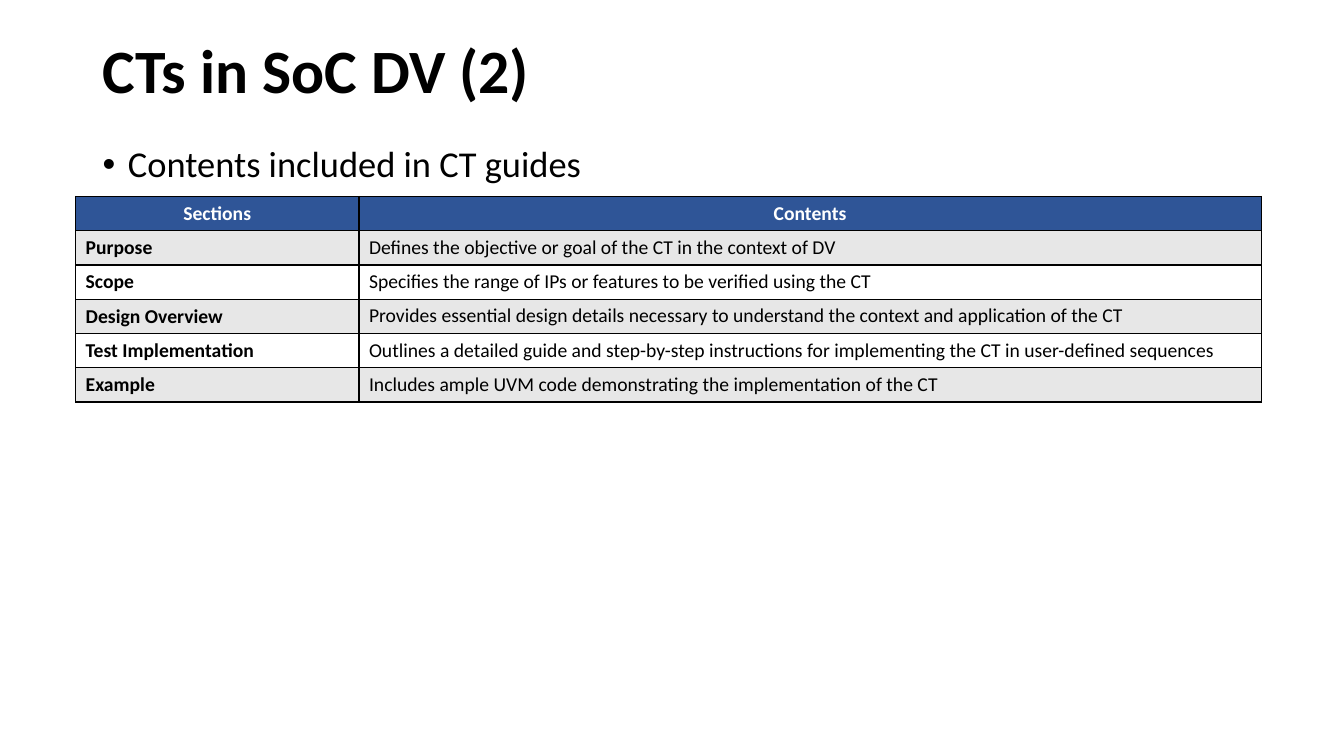
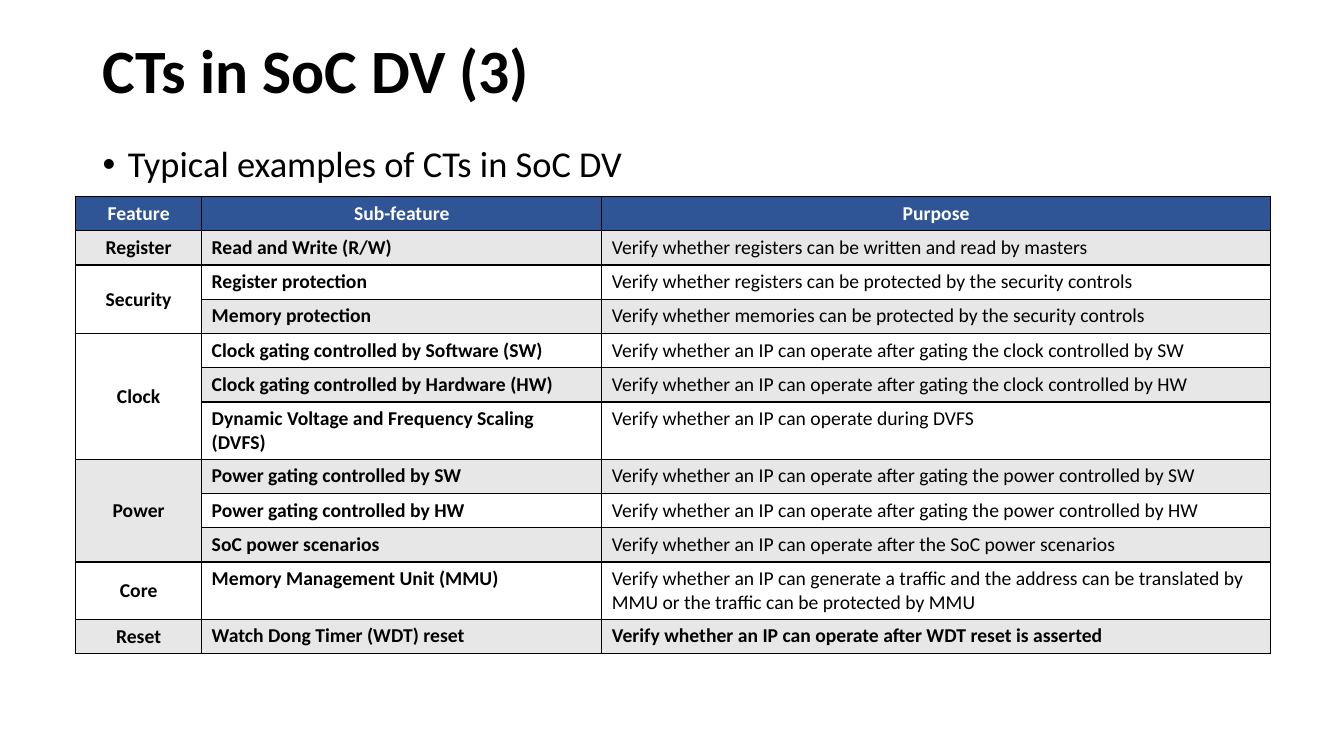
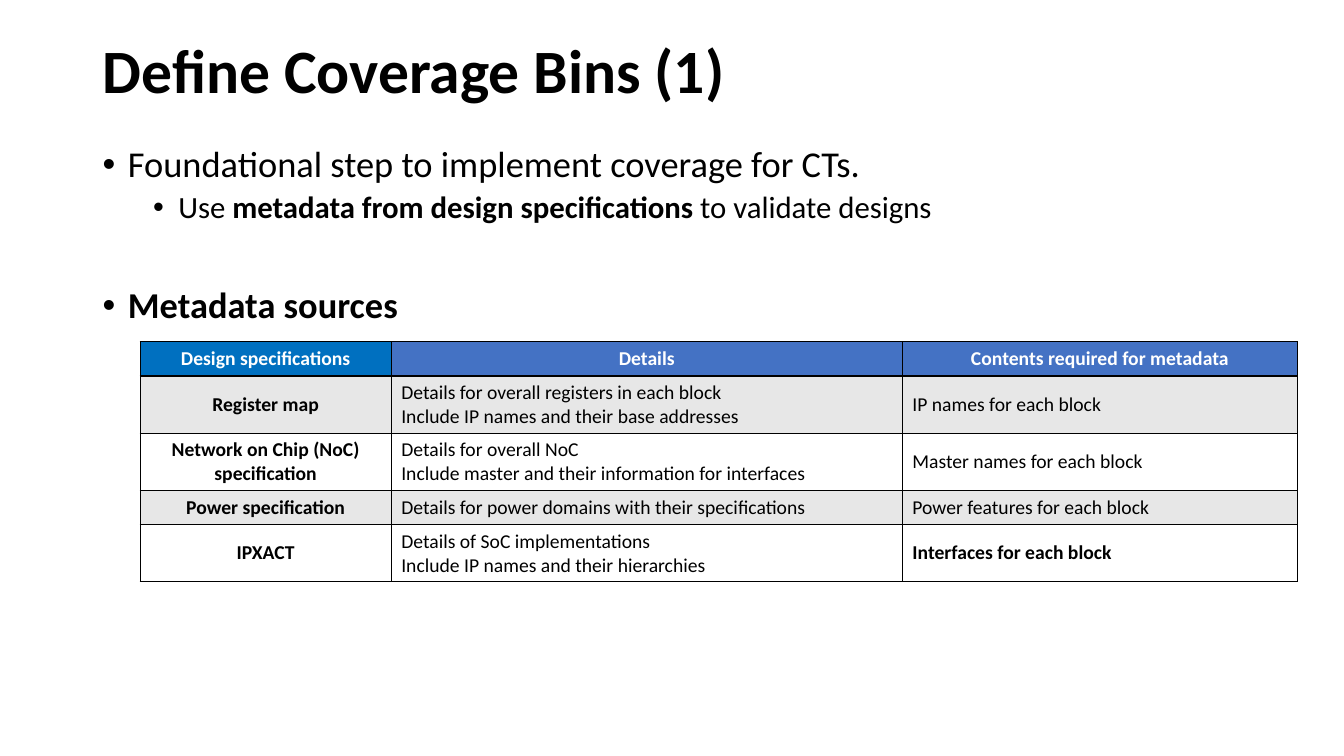
from lxml.etree import SubElement
from pptx import Presentation
from pptx.dml.color import RGBColor
from pptx.enum.text import MSO_ANCHOR as Anchor, PP_ALIGN as Align
from pptx.oxml.ns import qn
from pptx.util import Inches, Pt

# Shared look
FONT = "Calibri"
BLACK = RGBColor(0x00, 0x00, 0x00)
WHITE = RGBColor(0xFF, 0xFF, 0xFF)
STRIPE = RGBColor(0xE7, 0xE7, 0xE7)
NAVY = RGBColor(0x2F, 0x55, 0x97)
BLUE = RGBColor(0x44, 0x72, 0xC4)
BRIGHT_BLUE = RGBColor(0x00, 0x70, 0xC0)
LEFT, WIDTH = Inches(0.92), Inches(12.41)
ROW_HEIGHT = Inches(0.34)
BULLET_SIZES = [26, 22]
BULLET_INDENTS = [0.25, 0.75]


def style_font(font, size, color=BLACK, bold=False):
    font.name = FONT
    font.size = Pt(size)
    font.bold = bold
    font.color.rgb = color


def add_borders(cell):
    properties = cell._tc.get_or_add_tcPr()
    for position, side in enumerate(("a:lnL", "a:lnR", "a:lnT", "a:lnB")):
        line = properties.makeelement(qn(side), {"w": str(Pt(1))})
        fill = SubElement(line, qn("a:solidFill"))
        SubElement(fill, qn("a:srgbClr"), val=str(BLACK))
        properties.insert(position, line)


# Bullets: (level, space before, bold, text pieces); every second piece is bold
# Rows: None continues the merged cell above
SLIDES = [
    {
        "title": "CTs in SoC DV (2)",
        "bullets": [(0, 0, False, ["Contents included in CT guides"])],
        "place": (0.75, 1.95),
        "widths": [2.81, 8.95],
        "header_fills": [NAVY, NAVY],
        "centred": [], "bold": [0], "middle": [0], "bold_end": False,
        "rows": [
            ["Sections", "Contents"],
            ["Purpose", "Defines the objective or goal of the CT in the context of DV"],
            ["Scope", "Specifies the range of IPs or features to be verified using the CT"],
            ["Design Overview", "Provides essential design details necessary to understand "
             "the context and application of the CT"],
            ["Test Implementation", "Outlines a detailed guide and step-by-step instructions "
             "for implementing the CT in user-defined sequences"],
            ["Example", "Includes ample UVM code demonstrating the implementation of the CT"],
        ],
    },
    {
        "title": "CTs in SoC DV (3)",
        "bullets": [(0, 0, False, ["Typical examples of CTs in SoC DV"])],
        "place": (0.75, 1.95),
        "widths": [1.25, 3.97, 6.63],
        "header_fills": [NAVY, NAVY, NAVY],
        "centred": [0], "bold": [0, 1], "middle": [0], "bold_end": True,
        "rows": [
            ["Feature", "Sub-feature", "Purpose"],
            ["Register", "Read and Write (R/W)",
             "Verify whether registers can be written and read by masters"],
            ["Security", "Register protection",
             "Verify whether registers can be protected by the security controls"],
            [None, "Memory protection",
             "Verify whether memories can be protected by the security controls"],
            ["Clock", "Clock gating controlled by Software (SW)",
             "Verify whether an IP can operate after gating the clock controlled by SW"],
            [None, "Clock gating controlled by Hardware (HW)",
             "Verify whether an IP can operate after gating the clock controlled by HW"],
            [None, "Dynamic Voltage and Frequency Scaling (DVFS)",
             "Verify whether an IP can operate during DVFS"],
            ["Power", "Power gating controlled by SW",
             "Verify whether an IP can operate after gating the power controlled by SW"],
            [None, "Power gating controlled by HW",
             "Verify whether an IP can operate after gating the power controlled by HW"],
            [None, "SoC power scenarios",
             "Verify whether an IP can operate after the SoC power scenarios"],
            ["Core", "Memory Management Unit (MMU)",
             "Verify whether an IP can generate a traffic and the address can be "
             "translated by MMU or the traffic can be protected by MMU"],
            ["Reset", "Watch Dong Timer (WDT) reset",
             "Verify whether an IP can operate after WDT reset is asserted"],
        ],
    },
    {
        "title": "Define Coverage Bins (1)",
        "bullets": [
            (0, 0, False, ["Foundational step to implement coverage for CTs."]),
            (1, 5, False, ["Use ", "metadata from design specifications ",
                           "to validate designs"]),
            (0, 44, True, ["Metadata sources"]),
        ],
        "place": (1.39, 3.39),
        "widths": [2.49, 5.07, 3.92],
        "header_fills": [BRIGHT_BLUE, BLUE, BLUE],
        "centred": [0], "bold": [0], "middle": [0, 2], "bold_end": True,
        "rows": [
            ["Design specifications", "Details", "Contents required for metadata"],
            ["Register map", "Details for overall registers in each block\n"
             "Include IP names and their base addresses", "IP names for each block"],
            ["Network on Chip (NoC)\nspecification", "Details for overall NoC\n"
             "Include master and their information for interfaces",
             "Master names for each block"],
            ["Power specification", "Details for power domains with their specifications",
             "Power features for each block"],
            ["IPXACT", "Details of SoC implementations\n"
             "Include IP names and their hierarchies", "Interfaces for each block"],
        ],
    },
]

deck = Presentation()
deck.slide_width, deck.slide_height = Inches(13.33), Inches(7.5)

for content in SLIDES:
    page = deck.slides.add_slide(deck.slide_layouts[6])

    # Title
    box = page.shapes.add_textbox(LEFT, 0, WIDTH, Inches(1.45))
    box.text_frame.word_wrap = True
    box.text_frame.vertical_anchor = Anchor.MIDDLE
    para = box.text_frame.paragraphs[0]
    para.text = content["title"]
    para.line_spacing = 0.9
    style_font(para.font, 44, bold=True)

    # Bullets
    box = page.shapes.add_textbox(LEFT, Inches(1.4), WIDTH, Inches(5.01))
    frame = box.text_frame
    frame.word_wrap = True
    for index, (level, space, bold, pieces) in enumerate(content["bullets"]):
        para = frame.add_paragraph() if index else frame.paragraphs[0]
        para.level = level
        para.line_spacing = 0.9
        para.space_before = Pt(space)
        properties = para._p.get_or_add_pPr()
        properties.set("marL", str(Inches(BULLET_INDENTS[level])))
        properties.set("indent", str(Inches(-0.25)))
        SubElement(properties, qn("a:buFont"), typeface="Arial")
        SubElement(properties, qn("a:buChar"), char="•")
        style_font(para.font, BULLET_SIZES[level], bold=bold)
        for number, piece in enumerate(pieces):
            span = para.add_run()
            span.text = piece
            if number % 2:
                span.font.bold = True

    # Table
    rows, widths = content["rows"], content["widths"]
    left, top = content["place"]
    table = page.shapes.add_table(
        len(rows), len(widths), Inches(left), Inches(top),
        Inches(sum(widths)), ROW_HEIGHT * len(rows)).table
    table.first_row = table.horz_banding = False
    for column, width in zip(table.columns, widths):
        column.width = Inches(width)

    last_row, last_column = len(rows) - 1, len(widths) - 1
    for r, texts in enumerate(rows):
        table.rows[r].height = ROW_HEIGHT
        for c, text in enumerate(texts):
            cell = table.cell(r, c)
            header = r == 0
            bold_end = content["bold_end"] and (r, c) == (last_row, last_column)
            cell.fill.solid()
            cell.fill.fore_color.rgb = (
                content["header_fills"][c] if header else STRIPE if r % 2 else WHITE)
            add_borders(cell)
            if not header and c in content["middle"]:
                cell.vertical_anchor = Anchor.MIDDLE
            cell.text = text or ""
            for para in cell.text_frame.paragraphs:
                para.alignment = (
                    Align.CENTER if header or c in content["centred"] else Align.LEFT)
                style_font(para.font, 14, WHITE if header else BLACK,
                           header or c in content["bold"] or bold_end)

    # Merge each label with the open cells below it
    labels = [r for r, texts in enumerate(rows) if texts[0]]
    for start, end in zip(labels, labels[1:] + [len(rows)]):
        if end - start > 1:
            table.cell(start, 0).merge(table.cell(end - 1, 0))

deck.save("out.pptx")
